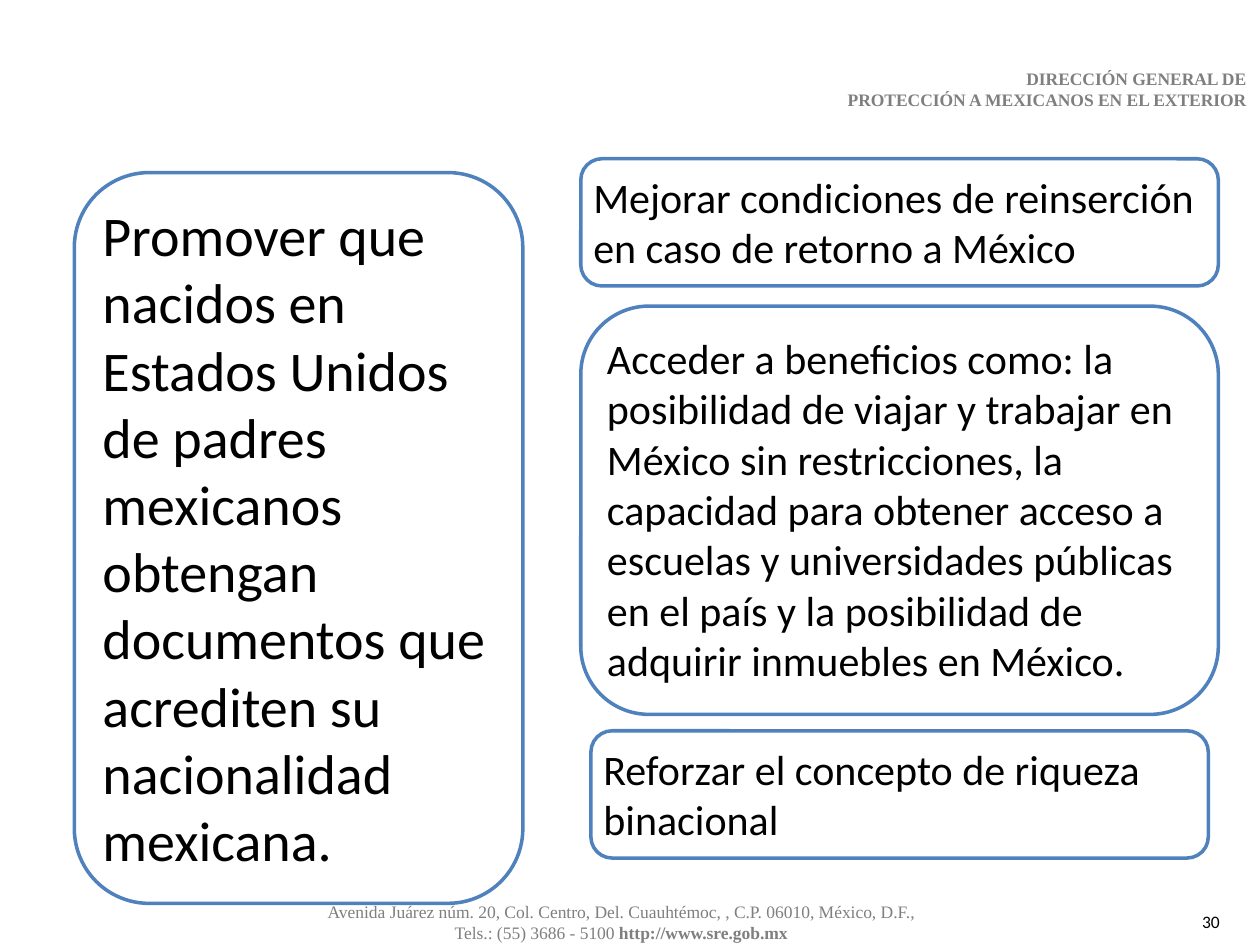
"""Build the slide on Mexican nationality documents and their benefits."""
from dataclasses import dataclass

from pptx import Presentation
from pptx import util as u
from pptx.dml.color import RGBColor
from pptx.enum import shapes, text

COLORS = {"paper": "FFFFFF", "border": "4F81BD", "ink": "000000", "muted": "7F7F7F"}
WIDTH, HEIGHT = u.Inches(10), u.Inches(7.5)
COLUMNS, ROWS = 100, 75
PADDING = u.Inches(0.05)


@dataclass(frozen=True)
class Area:
    """A region in grid columns and rows."""
    column: float
    row: float
    columns: float
    rows: float

    def lengths(self) -> tuple[int, int, int, int]:
        """Return left, top, width and height."""
        across, down = WIDTH / COLUMNS, HEIGHT / ROWS
        return (round(self.column * across), round(self.row * down),
                round(self.columns * across), round(self.rows * down))


@dataclass(frozen=True)
class Panel:
    """A rounded panel holding one goal."""
    area: Area
    goal: str
    size: int = 24


@dataclass(frozen=True)
class Label:
    """Plain text given as lines of (words, bold) pieces."""
    area: Area
    lines: list
    align: text.PP_ALIGN
    font: str = "Times New Roman"
    color: str = "muted"


PANELS = [
    Panel(Area(5.9, 13.7, 35.6, 58),
          "Promover que nacidos en Estados Unidos de padres mexicanos obtengan "
          "documentos que acrediten su nacionalidad mexicana.", 32),
    Panel(Area(46.1, 12.6, 50.6, 10.1),
          "Mejorar condiciones de reinserción en caso de retorno a México"),
    Panel(Area(46.9, 58, 49, 10.1), "Reforzar el concepto de riqueza binacional"),
    Panel(Area(46.1, 24.3, 50.6, 32.4),
          "Acceder a beneficios como: la posibilidad de viajar y trabajar en México "
          "sin restricciones, la capacidad para obtener acceso a escuelas y "
          "universidades públicas en el país y la posibilidad de adquirir inmuebles "
          "en México."),
]
LABELS = [
    Label(Area(8.9, 5.4, 90, 3.4),
          [[("DIRECCIÓN GENERAL DE", True)],
           [("PROTECCIÓN A MEXICANOS EN EL EXTERIOR", True)]],
          text.PP_ALIGN.RIGHT),
    Label(Area(17.8, 71, 63, 4.3),
          [[("Avenida Juárez núm. 20, Col. Centro, Del. Cuauhtémoc, , "
             "C.P. 06010, México, D.F.,", False)],
           [("Tels.: (55) 3686 - 5100 ", False), ("http://www.sre.gob.mx", True)]],
          text.PP_ALIGN.CENTER),
    Label(Area(73.5, 72.3, 23.3, 1.7), [[("30", False)]],
          text.PP_ALIGN.RIGHT, "Calibri", "ink"),
]


def write(frame, lines: list, *, size: int, font: str = "Calibri", color: str = "ink",
          align=text.PP_ALIGN.LEFT, anchor=text.MSO_ANCHOR.TOP, padding: int = 0) -> None:
    """Fill a text frame with formatted lines."""
    frame.word_wrap = True
    frame.vertical_anchor = anchor
    frame.margin_left = frame.margin_right = padding
    frame.margin_top = frame.margin_bottom = padding
    for index, pieces in enumerate(lines):
        paragraph = frame.add_paragraph() if index else frame.paragraphs[0]
        paragraph.alignment = align
        for words, bold in pieces:
            run = paragraph.add_run()
            run.text = words
            run.font.name, run.font.size, run.font.bold = font, u.Pt(size), bold
            run.font.color.rgb = RGBColor.from_string(COLORS[color])


def draw_label(slide, label: Label) -> None:
    """Draw a small plain label."""
    box = slide.shapes.add_textbox(*label.area.lengths())
    write(box.text_frame, label.lines, size=10, font=label.font, color=label.color,
          align=label.align, anchor=text.MSO_ANCHOR.MIDDLE)


def draw_panel(slide, panel: Panel) -> None:
    """Draw a rounded panel with its goal."""
    box = slide.shapes.add_shape(shapes.MSO_SHAPE.ROUNDED_RECTANGLE, *panel.area.lengths())
    box.shadow.inherit = False
    box.fill.solid()
    box.fill.fore_color.rgb = RGBColor.from_string(COLORS["paper"])
    box.line.color.rgb = RGBColor.from_string(COLORS["border"])
    box.line.width = u.Pt(2)
    write(box.text_frame, [[(panel.goal, False)]], size=panel.size, padding=PADDING)


def main() -> None:
    """Build and save the slide."""
    deck = Presentation()
    deck.slide_width, deck.slide_height = WIDTH, HEIGHT
    slide = deck.slides.add_slide(deck.slide_layouts[6])
    for label in LABELS:
        draw_label(slide, label)
    for panel in PANELS:
        draw_panel(slide, panel)
    deck.save("out.pptx")


if __name__ == "__main__":
    main()
